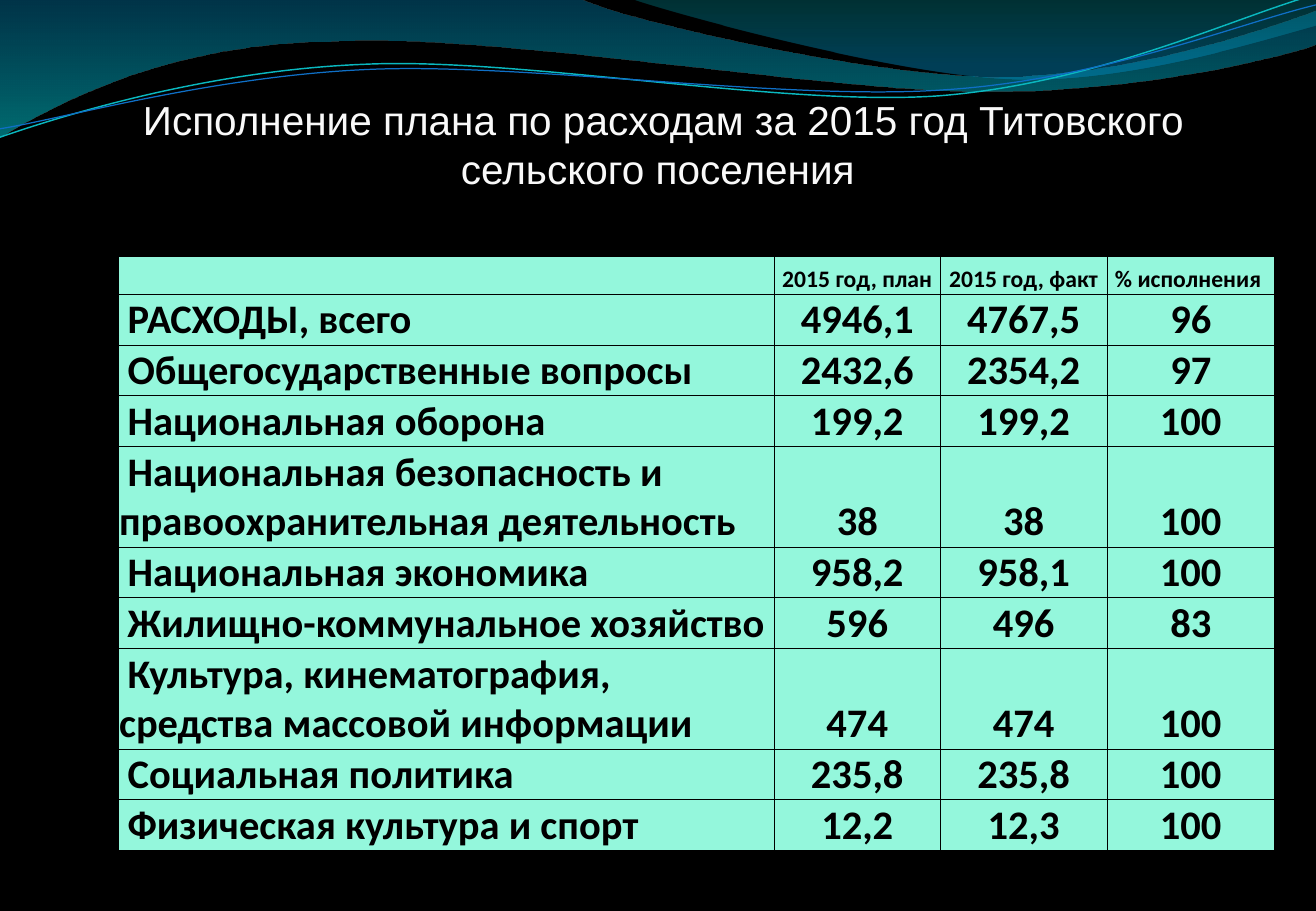
from lxml.etree import Element, SubElement
from pptx import Presentation
from pptx.dml.color import RGBColor
from pptx.enum.text import MSO_ANCHOR as ANCHOR, PP_ALIGN as ALIGN
from pptx.oxml import parse_xml
from pptx.oxml.ns import nsdecls, qn
from pptx.util import Pt

PX = 9144
BLACK = RGBColor(0x00, 0x00, 0x00)
WHITE = RGBColor(0xF9, 0xF9, 0xF9)
MINT = RGBColor(0x94, 0xF7, 0xDC)
BLUE = RGBColor(0x00, 0x74, 0xA1)
CYAN = RGBColor(0x00, 0xC6, 0xCF)
TEAL = RGBColor(0x00, 0xA1, 0xA9)
AZURE = RGBColor(0x00, 0x8B, 0xBF)
AQUA_LINE = RGBColor(0x0A, 0xB8, 0xBF)
BLUE_LINE = RGBColor(0x0F, 0x6F, 0xC6)

TITLE = "Исполнение плана по расходам за 2015 год Титовского сельского поселения "
COLS = [540, 137, 137, 138]
HEADER_H, ONE_LINE, TWO_LINES = 31, 42, 82
ROWS = [
    (HEADER_H, "", "2015 год, план", "2015 год, факт", "% исполнения "),
    (ONE_LINE, "РАСХОДЫ, всего", "4946,1", "4767,5", "96"),
    (ONE_LINE, "Общегосударственные вопросы", "2432,6", "2354,2", "97"),
    (ONE_LINE, "Национальная оборона", "199,2", "199,2", "100"),
    (TWO_LINES, "Национальная безопасность и правоохранительная деятельность",
     "38", "38", "100"),
    (ONE_LINE, "Национальная экономика", "958,2", "958,1", "100"),
    (ONE_LINE, "Жилищно-коммунальное хозяйство", "596", "496", "83"),
    (TWO_LINES, "Культура, кинематография, средства массовой информации",
     "474", "474", "100"),
    (ONE_LINE, "Социальная политика", "235,8", "235,8", "100"),
    (ONE_LINE, "Физическая культура и спорт", "12,2", "12,3", "100"),
]

# Each segment is an (x, y) point or a curve of two controls and an end point.
BIG_WAVE = [
    (0, -1), (477, -1), (515, 17, 719, 63, 822, 63), (924, 63, 1038, 26, 1083, 9),
    (1085, 36), (1065, 44, 942, 76, 808, 75), (674, 75, 414, 28, 279, 34),
    (140, 35, 50, 83, -1, 113),
]
SMALL_WAVE = [
    (519, -1), (552, 11, 739, 62, 833, 65), (927, 69, 1042, 32, 1083, 21), (1083, 0),
]
AQUA_CURVE = [
    (0, 113), (52, 95, 171, 58, 300, 53), (428, 47, 642, 88, 772, 79),
    (902, 69, 1017, 14, 1081, -4),
]
BLUE_CURVE = [
    (0, 106), (51, 98, 177, 62, 307, 57), (436, 52, 647, 83, 776, 74),
    (906, 66, 1020, 19, 1083, 4),
]


def add_outline(slide, segments, close):
    """Add a freeform of straight and cubic segments."""
    ends = [(seg[-2] * PX, seg[-1] * PX) for seg in segments]
    builder = slide.shapes.build_freeform(*ends[0])
    builder.add_line_segments(ends[1:], close=close)
    sp = builder.convert_to_shape()
    sp.shadow.inherit = False
    steps = list(sp._element.spPr.iter(qn("a:lnTo")))
    for step, seg in zip(steps, segments[1:]):
        if len(seg) == 6:
            step.tag = qn("a:cubicBezTo")
            for k in (0, 1):
                x, y = seg[2 * k] * PX - sp.left, seg[2 * k + 1] * PX - sp.top
                step.insert(k, Element(qn("a:pt"), x=str(x), y=str(y)))
    return sp


def add_wave(slide, segments, stops):
    """Add a closed wave with a translucent vertical gradient."""
    sp = add_outline(slide, segments, True)
    sp.line.fill.background()
    sp.fill.gradient()
    sp.fill.gradient_angle = 270
    for stop, (position, color, _) in zip(sp.fill.gradient_stops, stops):
        stop.position = position
        stop.color.rgb = color
    for clr, (_, _, alpha) in zip(sp._element.spPr.iter(qn("a:srgbClr")), stops):
        SubElement(clr, qn("a:alpha")).set("val", str(alpha * 1000))


def add_curve(slide, segments, color, width):
    """Add an open thin curve."""
    sp = add_outline(slide, segments, False)
    sp.fill.background()
    sp.line.color.rgb = color
    sp.line.width = Pt(width)


def style_font(p, name, size, color, bold=False):
    """Set the font of a paragraph."""
    f = p.font
    f.name, f.size, f.bold = name, Pt(size), bold
    f.color.rgb = color


def add_title(slide):
    """Add the centred slide title."""
    box = slide.shapes.add_textbox(101 * PX, 73 * PX, 890 * PX, 91 * PX)
    tf = box.text_frame
    tf.word_wrap = True
    tf.vertical_anchor = ANCHOR.MIDDLE
    p = tf.paragraphs[0]
    p.text = TITLE
    p.alignment = ALIGN.CENTER
    style_font(p, "Arial", 24, WHITE)


def fill_cell(cell, text, size, is_label):
    """Write and style one table cell."""
    cell.margin_left = cell.margin_top = cell.margin_right = PX
    cell.margin_bottom = 0
    cell.vertical_anchor = ANCHOR.BOTTOM
    cell.text = text
    p = cell.text_frame.paragraphs[0]
    p.alignment = ALIGN.LEFT if is_label else ALIGN.CENTER
    if is_label:
        p._p.get_or_add_pPr().set("indent", str(7 * PX))
    style_font(p, "Calibri", size, BLACK, True)
    for side in ("lnL", "lnR", "lnT", "lnB"):
        cell._tc.get_or_add_tcPr().append(parse_xml(
            f'<a:{side} {nsdecls("a")} w="{Pt(0.5)}"><a:solidFill>'
            f'<a:srgbClr val="{BLACK}"/></a:solidFill></a:{side}>'))
    cell.fill.solid()
    cell.fill.fore_color.rgb = MINT


def add_budget_table(slide):
    """Add the table of planned and actual spending."""
    height = sum(row[0] for row in ROWS)
    table = slide.shapes.add_table(
        len(ROWS), len(COLS), 97 * PX, 211 * PX, sum(COLS) * PX, height * PX).table
    table.first_row = table.horz_banding = False
    for column, width in zip(table.columns, COLS):
        column.width = width * PX
    for i, (row_height, *texts) in enumerate(ROWS):
        table.rows[i].height = row_height * PX
        for j, text in enumerate(texts):
            fill_cell(table.cell(i, j), text, 24 if i else 14, j == 0)


def main():
    """Build the slide and save it."""
    prs = Presentation()
    prs.slide_width, prs.slide_height = 1083 * PX, 750 * PX
    slide = prs.slides.add_slide(prs.slide_layouts[6])
    slide.background.fill.solid()
    slide.background.fill.fore_color.rgb = BLACK
    add_wave(slide, BIG_WAVE, [(0, BLUE, 45), (1, CYAN, 55)])
    add_wave(slide, SMALL_WAVE, [(0, TEAL, 30), (0.8, AZURE, 45)])
    add_curve(slide, AQUA_CURVE, AQUA_LINE, 0.85)
    add_curve(slide, BLUE_CURVE, BLUE_LINE, 0.75)
    add_budget_table(slide)
    add_title(slide)
    prs.save("out.pptx")


if __name__ == "__main__":
    main()
